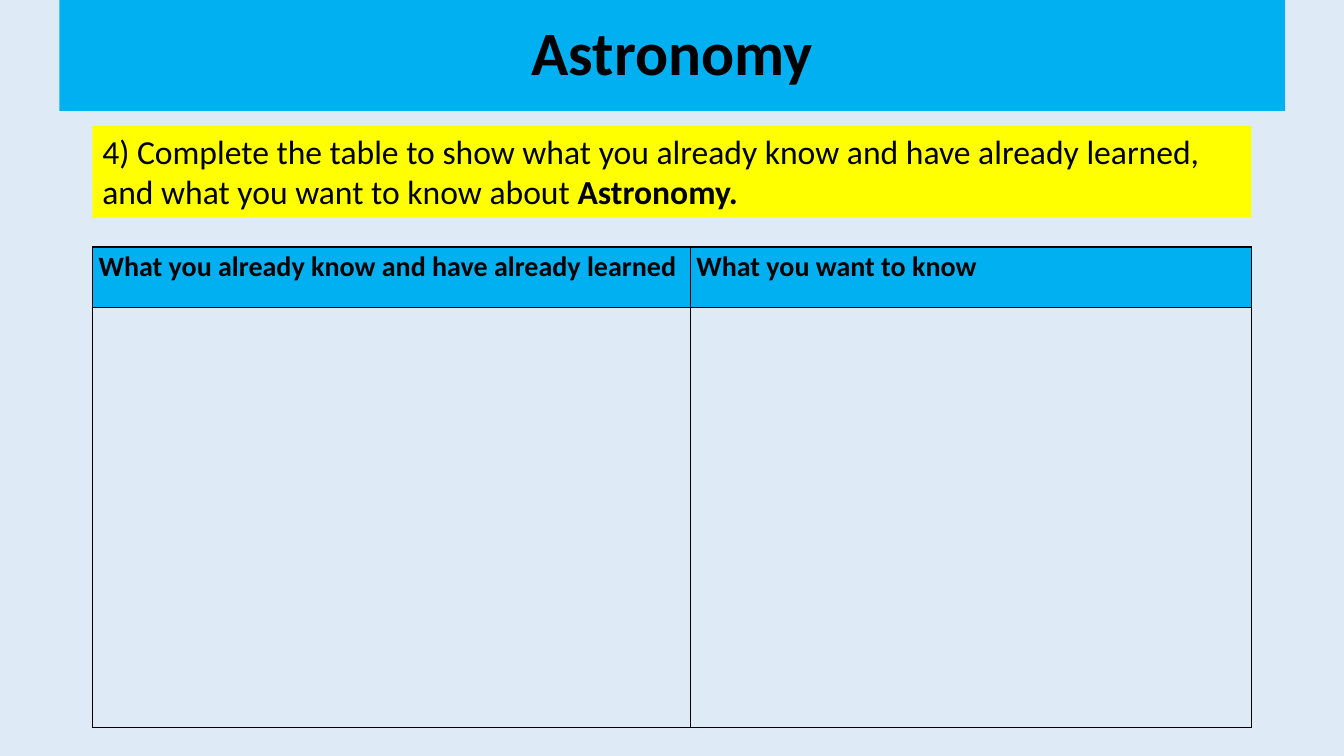
from dataclasses import dataclass

from lxml import etree
from pptx import Presentation
from pptx.dml.color import RGBColor
from pptx.enum import shapes, text
from pptx.oxml import ns
from pptx.util import Pt


@dataclass(frozen=True)
class Theme:
    font: str = "Calibri"
    background: str = "DEEBF7"
    accent: str = "00B0F0"
    highlight: str = "FFFF00"
    ink: str = "000000"
    title_size: int = 44
    task_size: int = 24
    header_size: int = 20
    border: int = 1


THEME = Theme()
LEFT, WIDTH = 66, 828  # shared by the task box and the table


def set_fill(fill, color):
    fill.solid()
    fill.fore_color.rgb = RGBColor.from_string(color)


def add_run(p, words, size, bold=False):
    r = p.add_run()
    r.text = words
    r.font.name = THEME.font
    r.font.size = Pt(size)
    r.font.bold = bold
    r.font.color.rgb = RGBColor.from_string(THEME.ink)


def add_panel(s, box, color, anchor, align):
    """Add a filled rectangle and return its first paragraph."""
    sp = s.shapes.add_shape(shapes.MSO_SHAPE.RECTANGLE, *map(Pt, box))
    sp.shadow.inherit = False
    set_fill(sp.fill, color)
    sp.line.fill.background()
    tf = sp.text_frame
    tf.word_wrap = True
    tf.vertical_anchor = anchor
    p = tf.paragraphs[0]
    p.alignment = align
    return p


def set_borders(cell):
    tc_pr = cell._tc.get_or_add_tcPr()
    for i, side in enumerate(("lnL", "lnR", "lnT", "lnB")):
        ln = etree.Element(ns.qn(f"a:{side}"), w=str(Pt(THEME.border)))
        fill = etree.SubElement(ln, ns.qn("a:solidFill"))
        etree.SubElement(fill, ns.qn("a:srgbClr"), val=THEME.ink)
        tc_pr.insert(i, ln)


def add_know_table(s, top, col_widths, row_heights, headers):
    frame = s.shapes.add_table(len(row_heights), len(col_widths), Pt(LEFT), Pt(top),
                               Pt(WIDTH), Pt(sum(row_heights)))
    table = frame.table
    table.first_row = table.horz_banding = False
    for col, width in zip(table.columns, col_widths):
        col.width = Pt(width)
    for row, height in zip(table.rows, row_heights):
        row.height = Pt(height)
    for cell in table.iter_cells():
        cell.margin_left = cell.margin_right = Pt(4.5)
        cell.margin_top = cell.margin_bottom = 0
        cell.fill.background()
        set_borders(cell)
    for cell, words in zip(table.rows[0].cells, headers):
        set_fill(cell.fill, THEME.accent)
        p = cell.text_frame.paragraphs[0]
        p.line_spacing = 1.07
        add_run(p, words, THEME.header_size, bold=True)


def main():
    prs = Presentation()
    prs.slide_width, prs.slide_height = Pt(960), Pt(540)
    s = prs.slides.add_slide(prs.slide_layouts[6])
    set_fill(s.background.fill, THEME.background)

    # Title banner
    p = add_panel(s, (42.5, 0, 875.5, 79.2), THEME.accent,
                  text.MSO_ANCHOR.MIDDLE, text.PP_ALIGN.CENTER)
    p.line_spacing = 0.9
    add_run(p, "Astronomy", THEME.title_size, bold=True)

    # Table to complete
    add_know_table(s, 176.4, (427, 401), (43.5, 299.8),
                   ("What you already know and have already learned",
                    "What you want to know"))

    # Task instruction
    p = add_panel(s, (LEFT, 90, WIDTH, 65.4), THEME.highlight,
                  text.MSO_ANCHOR.TOP, text.PP_ALIGN.LEFT)
    add_run(p, "4) Complete the table to show what you already know and have already "
               "learned, and what you want to know about ", THEME.task_size)
    add_run(p, "Astronomy.", THEME.task_size, bold=True)

    prs.save("out.pptx")


if __name__ == "__main__":
    main()
